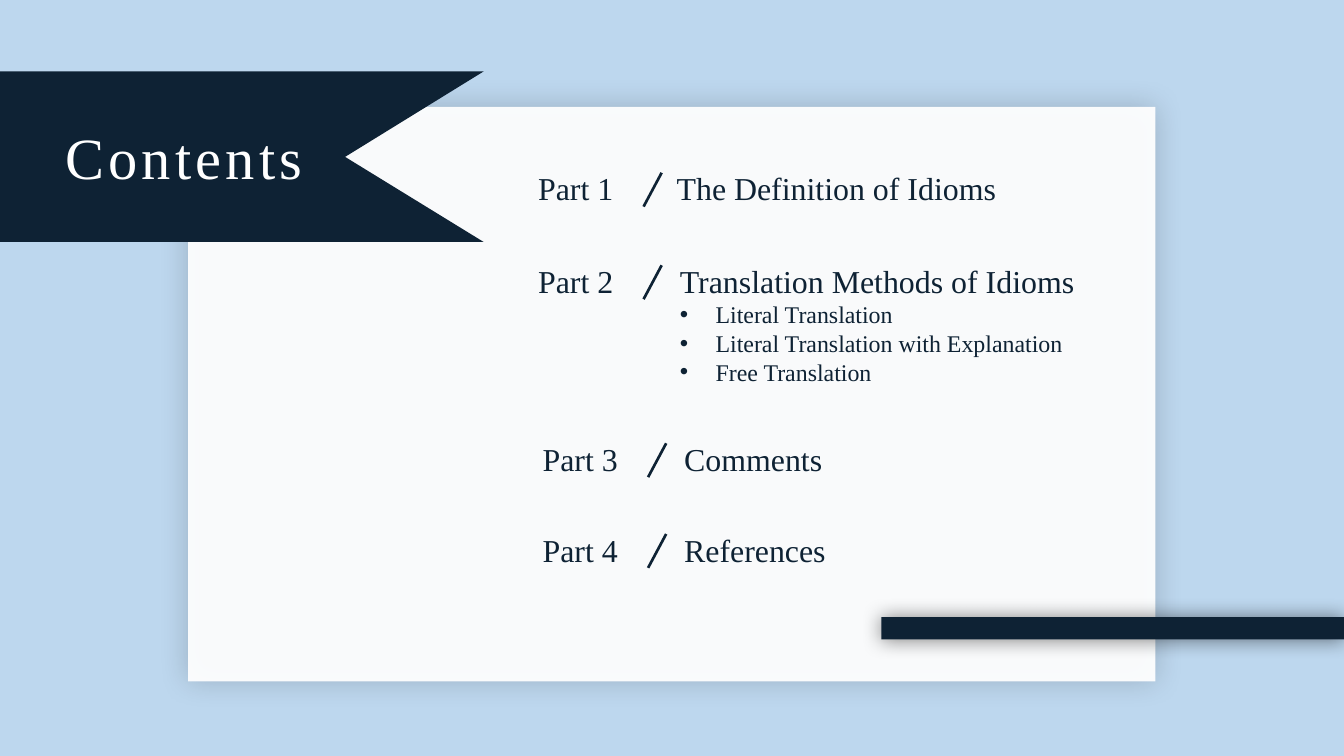
"""Build the contents slide of a talk on translating idioms."""
from lxml.etree import SubElement
from pptx import Presentation
from pptx.dml.color import RGBColor
from pptx.enum.shapes import MSO_CONNECTOR, MSO_SHAPE
from pptx.enum.text import MSO_ANCHOR, MSO_AUTO_SIZE, PP_ALIGN
from pptx.oxml.ns import qn
from pptx.util import Cm, Pt

TITLE = "Contents"
PARTS = [
    ("Part 1", "The Definition of Idioms", 14.05, 17.73, 4.37),
    ("Part 2", "Translation Methods of Idioms", 14.05, 17.81, 6.83),
    ("Part 3", "Comments", 14.17, 17.93, 11.56),
    ("Part 4", "References", 14.17, 17.93, 13.97),
]
METHODS = ["Literal Translation", "Literal Translation with Explanation", "Free Translation"]
LISTED = "Part 2"
COLORS = {"sky": "BDD7EE", "navy": "0E2234", "white": "FFFFFF", "black": "000000"}
FONT = "Times New Roman"
WIDE, HIGH = 35.71, 20.09
RIBBON = [(0, 1.9), (12.85, 1.9), (9.17, 4.17), (12.85, 6.43), (0, 6.43)]


def tint(name):
    return RGBColor.from_string(COLORS[name])


def paint(shape, color):
    shape.fill.solid()
    shape.fill.fore_color.rgb = tint(color)
    shape.line.fill.background()
    shape.shadow.inherit = False


def add_bar(slide, box, color, alpha, blur):
    bar = slide.shapes.add_shape(MSO_SHAPE.RECTANGLE, *map(Cm, box))
    paint(bar, color)
    effects = bar._element.spPr.find(qn("a:effectLst"))
    glow = SubElement(effects, qn("a:outerShdw"), blurRad=str(Pt(blur)), dist="0",
                      algn="ctr", rotWithShape="0")
    shade = SubElement(glow, qn("a:srgbClr"), val=COLORS["black"])
    SubElement(shade, qn("a:alpha"), val=str(alpha * 1000))
    return bar


def place(shape, box):
    shape.left, shape.top, shape.width, shape.height = map(Cm, box)


def style(line, size, color="navy"):
    line.space_before = Pt(0)
    for run in line.runs:
        run.font.name = FONT
        run.font.size = Pt(size)
        run.font.color.rgb = tint(color)


def set_frame(frame):
    frame.word_wrap = True
    frame.vertical_anchor = MSO_ANCHOR.TOP
    frame.auto_size = MSO_AUTO_SIZE.SHAPE_TO_FIT_TEXT


def add_label(slide, text, box):
    frame = slide.shapes.add_textbox(*map(Cm, box)).text_frame
    set_frame(frame)
    frame.text = text
    style(frame.paragraphs[0], 24)


def add_slash(slide, left, top):
    slash = slide.shapes.add_connector(
        MSO_CONNECTOR.STRAIGHT, Cm(left + 0.48), Cm(top), Cm(left), Cm(top + 0.9))
    slash.line.color.rgb = tint("navy")
    slash.line.width = Pt(2)
    SubElement(slash._element.spPr, qn("a:effectLst"))


def fill_body(body, head, box):
    place(body, box)
    frame = body.text_frame
    set_frame(frame)
    frame.text = "\n".join([head, *METHODS])
    for i, line in enumerate(frame.paragraphs):
        style(line, 18 if i else 24)
        props = line._p.get_or_add_pPr()
        indent = Cm(0.95) if i else 0
        props.set("marL", str(indent))
        props.set("indent", str(-indent))
        if i:
            SubElement(props, qn("a:buFont"), typeface="Arial")
            SubElement(props, qn("a:buChar"), char="•")
        else:
            SubElement(props, qn("a:buNone"))


def fill_title(title):
    place(title, (0, 3.1, 9.78, 2.13))
    frame = title.text_frame
    set_frame(frame)
    frame.text = TITLE
    line = frame.paragraphs[0]
    line.alignment = PP_ALIGN.CENTER
    style(line, 44, "white")
    line.runs[0].font._element.set("spc", "320")


def main():
    deck = Presentation()
    deck.slide_width, deck.slide_height = Cm(WIDE), Cm(HIGH)
    slide = deck.slides.add_slide(deck.slide_layouts[1])
    back = slide.background.fill
    back.solid()
    back.fore_color.rgb = tint("sky")
    title, body = slide.placeholders

    card = add_bar(slide, (5, 2.84, 25.7, 15.27), "white", 18, 22)
    color = card._element.spPr.find(qn("a:solidFill"))[0]
    SubElement(color, qn("a:alpha"), val="94000")

    points = [(Cm(x), Cm(y)) for x, y in RIBBON]
    pen = slide.shapes.build_freeform(*points[0])
    pen.add_line_segments(points[1:])
    paint(pen.convert_to_shape(), "navy")
    add_bar(slide, (23.42, 16.4, WIDE - 23.42, 0.59), "navy", 50, 15)

    for part, name, left, start, top in PARTS:
        add_label(slide, part, (left, top, 3.15, 1.27))
        add_slash(slide, left + 3.05, top + 0.22)
        if part == LISTED:
            fill_body(body, name, (start, top, 13.46, 3.58))
        else:
            add_label(slide, name, (start, top, 11.13, 1.27))

    fill_title(title)
    for holder in (title, body):
        slide.shapes._spTree.append(holder._element)
    deck.save("out.pptx")


if __name__ == "__main__":
    main()
